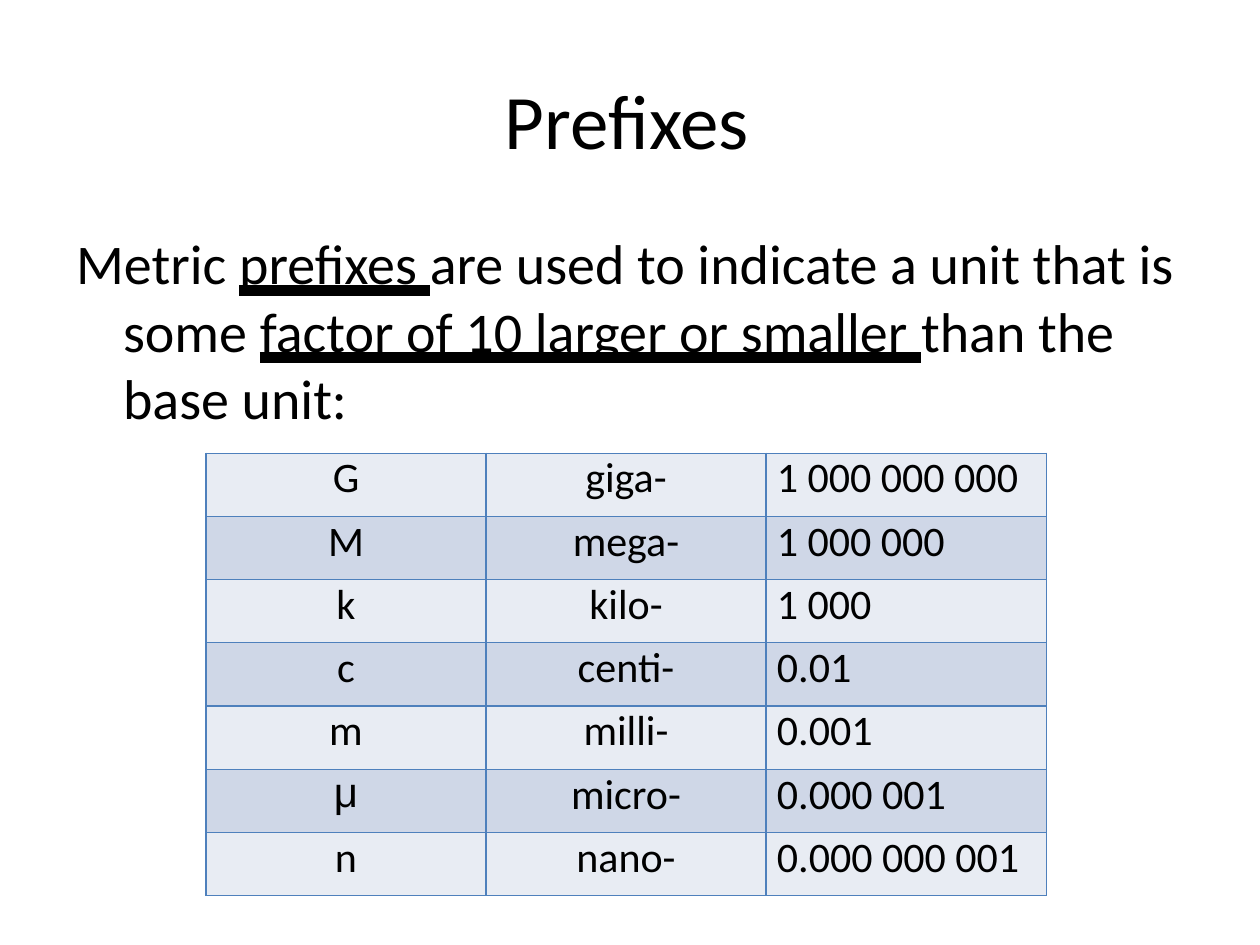
import pptx
import pptx.dml.color
import pptx.enum.text
import pptx.oxml.ns
import pptx.util
from lxml import etree

PX = 914400 / 126
COLOURS = {"text": "000000", "border": "4E80BC", "light": "E8ECF3", "dark": "CFD7E7"}
PREFIXES = [
    ("G", "giga-", "1 000 000 000"),
    ("M", "mega-", "1 000 000"),
    ("k", "kilo-", "1 000"),
    ("c", "centi-", "0.01"),
    ("m", "milli-", "0.001"),
    ("μ", "micro-", "0.000 001"),
    ("n", "nano-", "0.000 000 001"),
]


def write(para, text, size, font="Calibri", underline=None):
    span = para.add_run()
    span.text = text
    span.font.size = pptx.util.Pt(size)
    span.font.name = font
    span.font.underline = underline
    span.font.color.rgb = pptx.dml.color.RGBColor.from_string(COLOURS["text"])


def place(box, left, top, width, height):
    """Move a placeholder and clear its insets; return its first paragraph."""
    box.left, box.top, box.width, box.height = (
        round(side * PX) for side in (left, top, width, height))
    frame = box.text_frame
    frame.word_wrap = True
    frame.auto_size = pptx.enum.text.MSO_AUTO_SIZE.NONE
    frame.vertical_anchor = pptx.enum.text.MSO_ANCHOR.TOP
    frame.margin_left = frame.margin_right = frame.margin_bottom = 0
    frame.margin_top = round(2 * PX)
    para = frame.paragraphs[0]
    para.space_before = pptx.util.Pt(0)
    return para


deck = pptx.Presentation()
deck.slide_width = pptx.util.Inches(10)
deck.slide_height = pptx.util.Inches(7.5)
page = deck.slides.add_slide(deck.slide_layouts[1])

# Title
para = place(page.shapes.title, 178, 71, 898, 92)
para.alignment = pptx.enum.text.PP_ALIGN.CENTER
write(para, "Prefixes", 44)

# Definition with a hanging indent and no bullet
para = place(page.placeholders[1], 74, 227, 1113, 202)
settings = para._p.get_or_add_pPr()
settings.set("marL", str(round(49 * PX)))
settings.set("indent", str(round(-47 * PX)))
etree.SubElement(settings, pptx.oxml.ns.qn("a:buNone"))
heavy = pptx.enum.text.MSO_UNDERLINE.HEAVY_LINE
for text, underline in [
    ("Metric ", None),
    ("prefixes ", heavy),
    ("are used to indicate a unit that is some ", None),
    ("factor of 10 larger or smaller ", heavy),
    ("than the base unit:", None),
]:
    write(para, text, 32, underline=underline)

# Table of prefixes
table = page.shapes.add_table(
    len(PREFIXES), 3, *(round(side * PX) for side in (206, 453, 840, 443))).table
table.first_row = table.horz_banding = False
for row, values in enumerate(PREFIXES):
    for column, value in enumerate(values):
        cell = table.cell(row, column)
        cell.margin_right = cell.margin_top = cell.margin_bottom = 0
        cell.margin_left = round(11 * PX) if column == 2 else 0

        properties = cell._tc.get_or_add_tcPr()
        for side in ("L", "R", "T", "B"):
            thin = (side == "T" and row == 0) or (side == "R" and column == 2)
            line = etree.SubElement(properties, pptx.oxml.ns.qn("a:ln" + side))
            line.set("w", str(pptx.util.Pt(0.4 if thin else 0.8)))
            fill = etree.SubElement(line, pptx.oxml.ns.qn("a:solidFill"))
            etree.SubElement(fill, pptx.oxml.ns.qn("a:srgbClr")).set("val", COLOURS["border"])
        cell.fill.solid()
        cell.fill.fore_color.rgb = pptx.dml.color.RGBColor.from_string(
            COLOURS["dark" if row % 2 else "light"])

        para = cell.text_frame.paragraphs[0]
        para.space_before = pptx.util.Pt(3.4 if value == "μ" else 2.1)
        if column < 2:
            para.alignment = pptx.enum.text.PP_ALIGN.CENTER
        write(para, value, 24, font="Arial" if value == "μ" else "Calibri")

deck.save("out.pptx")
